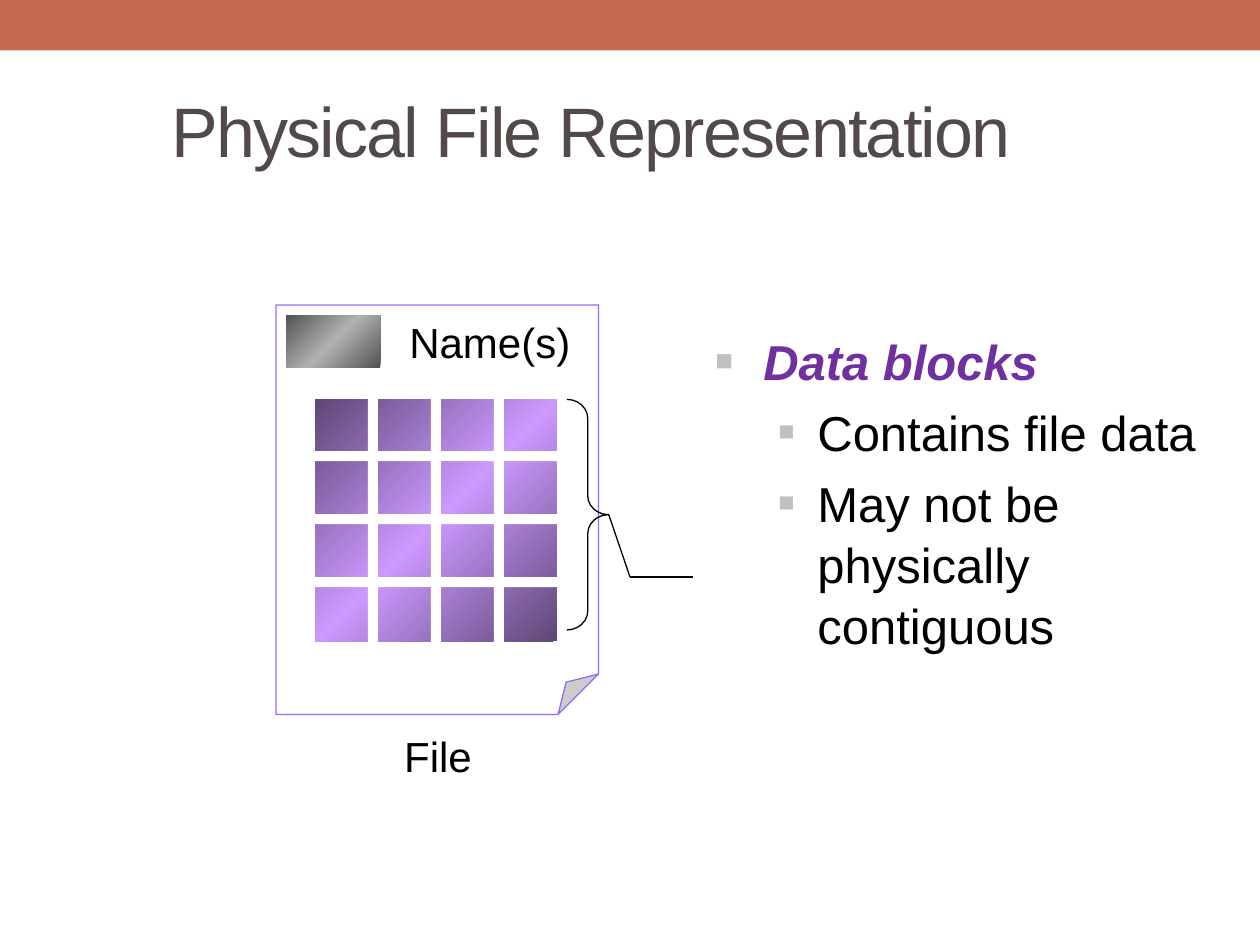
from copy import deepcopy
from dataclasses import dataclass

from lxml.etree import SubElement
from pptx import Presentation
from pptx.dml.color import RGBColor
from pptx.enum.shapes import MSO_CONNECTOR, MSO_SHAPE
from pptx.enum.text import MSO_ANCHOR, MSO_AUTO_SIZE, PP_ALIGN
from pptx.oxml.ns import qn
from pptx.shapes.autoshape import Shape
from pptx.slide import Slide
from pptx.util import Inches, Pt

COLORS = {
    "banner": "C66951",
    "title": "534949",
    "text": "000000",
    "paper": "FFFFFF",
    "outline": "9966FF",
    "block_dark": "5E4776",
    "block_light": "CC99FF",
    "header_dark": "525252",
    "header_light": "B2B2B2",
    "emphasis": "7030A0",
    "bullet": "C0C0C0",
}
FONT = "Arial"


@dataclass(frozen=True)
class Box:
    left: float
    top: float
    width: float
    height: float

    def lengths(self) -> tuple:
        return tuple(Inches(value) for value in (self.left, self.top, self.width, self.height))


@dataclass(frozen=True)
class Bullet:
    text: str
    level: int
    margin: float
    indent: float
    size: int
    color: str = "text"
    emphasis: bool = False


BULLETS = (
    Bullet("Data blocks", 0, 0.38, 0.38, 60, "emphasis", True),
    Bullet("Contains file data", 1, 0.81, 0.31, 55),
    Bullet("May not be physically contiguous", 1, 0.81, 0.31, 55),
)


def color(name: str) -> RGBColor:
    return RGBColor.from_string(COLORS[name])


def add_block(slide: Slide, kind: MSO_SHAPE, box: Box, fill: str = "", line: str = "") -> Shape:
    shape = slide.shapes.add_shape(kind, *box.lengths())
    shape.shadow.inherit = False
    if fill:
        shape.fill.solid()
        shape.fill.fore_color.rgb = color(fill)
    else:
        shape.fill.background()
    if line:
        shape.line.color.rgb = color(line)
        shape.line.width = Pt(0.75)
    else:
        shape.line.fill.background()
    return shape


def set_guides(shape: Shape, **guides: int) -> None:
    guide_list = next(shape._element.iter(qn("a:avLst")))
    for guide in list(guide_list):
        guide_list.remove(guide)
    for name, value in guides.items():
        SubElement(guide_list, qn("a:gd"), name=name, fmla=f"val {value}")


def add_gradient_block(slide: Slide, box: Box, dark: str, light: str) -> None:
    shape = add_block(slide, MSO_SHAPE.RECTANGLE, box)
    shape.fill.gradient()
    shape.fill.gradient_angle = 315
    stop_list = next(shape._element.iter(qn("a:gsLst")))
    middle = deepcopy(stop_list[0])
    middle.set("pos", "50000")
    stop_list.insert(1, middle)
    for stop, name in zip(shape.fill.gradient_stops, (dark, light, dark)):
        stop.color.rgb = color(name)


def add_line(slide: Slide, start: tuple[float, float], end: tuple[float, float]) -> None:
    points = [Inches(value) for value in start + end]
    connector = slide.shapes.add_connector(MSO_CONNECTOR.STRAIGHT, *points)
    connector.line.color.rgb = color("text")
    connector.line.width = Pt(0.75)
    SubElement(connector._element.spPr, qn("a:effectLst"))


def write_run(paragraph, text: str, *, size: float, fill: str = "text",
              emphasis: bool = False, spacing: int = 0) -> None:
    run = paragraph.add_run()
    run.text = text
    run.font.name = FONT
    run.font.size = Pt(size)
    run.font.bold = run.font.italic = emphasis
    run.font.color.rgb = color(fill)
    if spacing:
        run._r.get_or_add_rPr().set("spc", str(spacing))


def add_label(slide: Slide, text: str, box: Box, *, wrap: bool = False,
              anchor: MSO_ANCHOR = MSO_ANCHOR.TOP, **run_format) -> None:
    frame = slide.shapes.add_textbox(*box.lengths()).text_frame
    frame.word_wrap = wrap
    frame.auto_size = MSO_AUTO_SIZE.NONE if wrap else MSO_AUTO_SIZE.SHAPE_TO_FIT_TEXT
    frame.vertical_anchor = anchor
    frame.paragraphs[0].alignment = PP_ALIGN.LEFT
    write_run(frame.paragraphs[0], text, **run_format)


def add_bullets(slide: Slide, box: Box) -> None:
    frame = slide.shapes.add_textbox(*box.lengths()).text_frame
    frame.word_wrap = True
    frame.margin_top = Inches(0.61)
    for index, bullet in enumerate(BULLETS):
        paragraph = frame.add_paragraph() if index else frame.paragraphs[0]
        paragraph.level = bullet.level
        paragraph.line_spacing = 1.04
        paragraph.space_before = Pt(5.6 if index else 0)
        properties = paragraph._p.get_or_add_pPr()
        properties.set("marL", str(Inches(bullet.margin)))
        properties.set("indent", str(-Inches(bullet.indent)))
        bullet_color = SubElement(properties, qn("a:buClr"))
        SubElement(bullet_color, qn("a:srgbClr"), val=COLORS["bullet"])
        SubElement(properties, qn("a:buSzPct"), val=str(bullet.size * 1000))
        SubElement(properties, qn("a:buFont"), typeface=FONT)
        SubElement(properties, qn("a:buChar"), char="■")
        write_run(paragraph, bullet.text, size=28, fill=bullet.color, emphasis=bullet.emphasis)


def add_data_blocks(slide: Slide) -> None:
    add_gradient_block(slide, Box(2.5, 3.17, 1.92, 1.92), "block_dark", "block_light")
    column_gaps = [Box(2.92 + 0.5 * index, 3.08, 0.08, 2.17) for index in range(3)]
    row_gaps = [Box(2.42, 3.58 + 0.5 * index, 2.08, 0.08) for index in range(3)]
    for gap in column_gaps + row_gaps:
        add_block(slide, MSO_SHAPE.RECTANGLE, gap, "paper")


def main() -> None:
    presentation = Presentation()
    presentation.slide_width = Inches(10)
    presentation.slide_height = Inches(7.5)
    slide = presentation.slides.add_slide(presentation.slide_layouts[6])

    add_block(slide, MSO_SHAPE.RECTANGLE, Box(0, 0, 10, 0.4), "banner")
    add_label(slide, "Physical File Representation", Box(1.26, 0.23, 8.52, 1.6), wrap=True,
              anchor=MSO_ANCHOR.MIDDLE, size=40, fill="title", spacing=-100)

    page = add_block(slide, MSO_SHAPE.FOLDED_CORNER, Box(2.19, 2.42, 2.56, 3.25), "paper", "outline")
    set_guides(page, adj=12500)
    add_label(slide, "File", Box(3.11, 5.75, 0.74, 0.5), size=24)
    add_gradient_block(slide, Box(2.27, 2.5, 0.75, 0.42), "header_dark", "header_light")
    add_label(slide, "Name(s)", Box(3.15, 2.46, 1.48, 0.5), size=24)
    add_data_blocks(slide)

    add_bullets(slide, Box(5.58, 2, 4.17, 4.5))
    brace = add_block(slide, MSO_SHAPE.RIGHT_BRACE, Box(4.5, 3.17, 0.33, 1.83), line="text")
    set_guides(brace, adj1=45800, adj2=50000)
    add_line(slide, (5.5, 4.58), (5, 4.58))
    add_line(slide, (5, 4.58), (4.83, 4.08))

    presentation.save("out.pptx")


if __name__ == "__main__":
    main()
